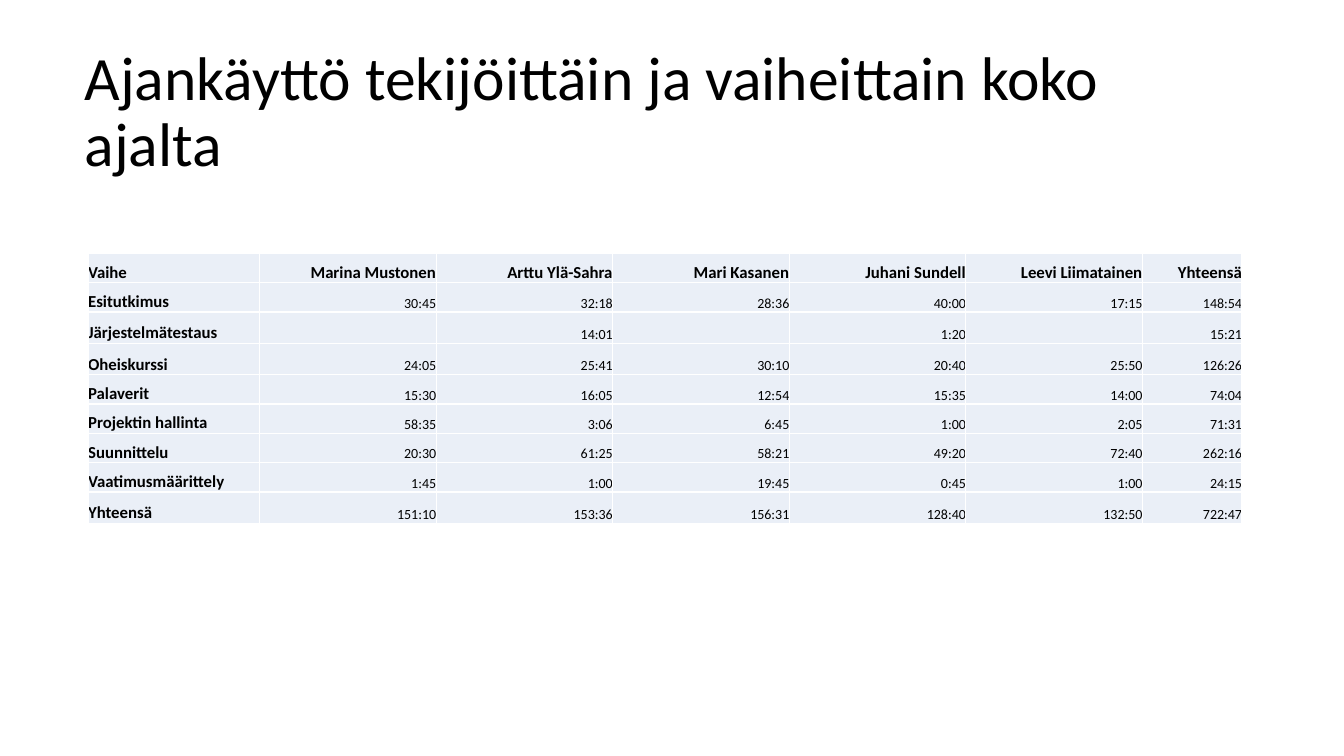
from typing import NamedTuple

from lxml.etree import SubElement
from pptx import Presentation
from pptx.dml.color import RGBColor
from pptx.enum.text import MSO_ANCHOR as Anchor, PP_ALIGN as Align
from pptx.oxml.ns import qn
from pptx.util import Cm, Pt

FONT = "Calibri"
BLACK, WHITE, PALE_BLUE = "000000", "FFFFFF", "EAEFF7"


class Phase(NamedTuple):
    name: str
    hours: tuple[str, ...]
    height: float = 0.74


PEOPLE = ("Marina Mustonen", "Arttu Ylä-Sahra", "Mari Kasanen",
          "Juhani Sundell", "Leevi Liimatainen", "Yhteensä")
PHASES = [
    Phase("Vaihe", PEOPLE),
    Phase("Esitutkimus", ("30:45", "32:18", "28:36", "40:00", "17:15", "148:54")),
    Phase("Järjestelmätestaus", ("", "14:01", "", "1:20", "", "15:21"), 0.79),
    Phase("Oheiskurssi", ("24:05", "25:41", "30:10", "20:40", "25:50", "126:26"), 0.79),
    Phase("Palaverit", ("15:30", "16:05", "12:54", "15:35", "14:00", "74:04")),
    Phase("Projektin hallinta", ("58:35", "3:06", "6:45", "1:00", "2:05", "71:31")),
    Phase("Suunnittelu", ("20:30", "61:25", "58:21", "49:20", "72:40", "262:16")),
    Phase("Vaatimusmäärittely", ("1:45", "1:00", "19:45", "0:45", "1:00", "24:15")),
    Phase("Yhteensä", ("151:10", "153:36", "156:31", "128:40", "132:50", "722:47"), 0.79),
]
COL_WIDTHS = [4.32] + [4.45] * 5 + [2.51]


def rgb(color: str) -> RGBColor:
    return RGBColor.from_string(color)


def write(tf, text: str, *, size: float, bold: bool = False,
          align: Align = Align.LEFT, spacing: float = 1.0) -> None:
    p = tf.paragraphs[0]
    p.alignment, p.line_spacing = align, spacing
    if not text:
        SubElement(p._p, qn("a:endParaRPr"), sz=str(int(size * 100)))
        return
    r = p.add_run()
    r.text = text
    r.font.name, r.font.size, r.font.bold = FONT, Pt(size), bold
    r.font.color.rgb = rgb(BLACK)


def set_borders(cell, color: str, width: float) -> None:
    tc_pr = cell._tc.get_or_add_tcPr()
    for side in ("lnL", "lnR", "lnT", "lnB"):
        ln = SubElement(tc_pr, qn(f"a:{side}"), w=str(Pt(width)))
        SubElement(SubElement(ln, qn("a:solidFill")), qn("a:srgbClr"), val=color)


def format_cell(cell) -> None:
    set_borders(cell, WHITE, 1)
    cell.fill.solid()
    cell.fill.fore_color.rgb = rgb(PALE_BLUE)
    cell.vertical_anchor = Anchor.BOTTOM
    cell.margin_left = cell.margin_right = cell.margin_top = cell.margin_bottom = 0


def add_title(s, text: str) -> None:
    sp = s.shapes.title
    sp.left, sp.top, sp.width, sp.height = Cm(1.88), Cm(1.02), Cm(29.79), Cm(3.68)
    sp.text_frame.word_wrap = True
    sp.text_frame.vertical_anchor = Anchor.MIDDLE
    write(sp.text_frame, text, size=44, spacing=0.9)


def add_hours_table(s) -> None:
    height = sum(phase.height for phase in PHASES)
    table = s.shapes.add_table(len(PHASES), len(COL_WIDTHS), Cm(2.22), Cm(6.38),
                               Cm(sum(COL_WIDTHS)), Cm(height)).table
    table.first_row = table.horz_banding = False
    for column, width in zip(table.columns, COL_WIDTHS):
        column.width = Cm(width)
    for i, phase in enumerate(PHASES):
        table.rows[i].height = Cm(phase.height)
        for j, text in enumerate((phase.name, *phase.hours)):
            cell = table.cell(i, j)
            format_cell(cell)
            heading = i == 0 or j == 0
            write(cell.text_frame, text, size=12 if heading else 10, bold=heading,
                  align=Align.RIGHT if j else Align.LEFT)


def main() -> None:
    prs = Presentation()
    prs.slide_width, prs.slide_height = Cm(33.87), Cm(19.05)
    s = prs.slides.add_slide(prs.slide_layouts[5])
    add_title(s, "Ajankäyttö tekijöittäin ja vaiheittain koko ajalta")
    add_hours_table(s)
    prs.save("out.pptx")


if __name__ == "__main__":
    main()
